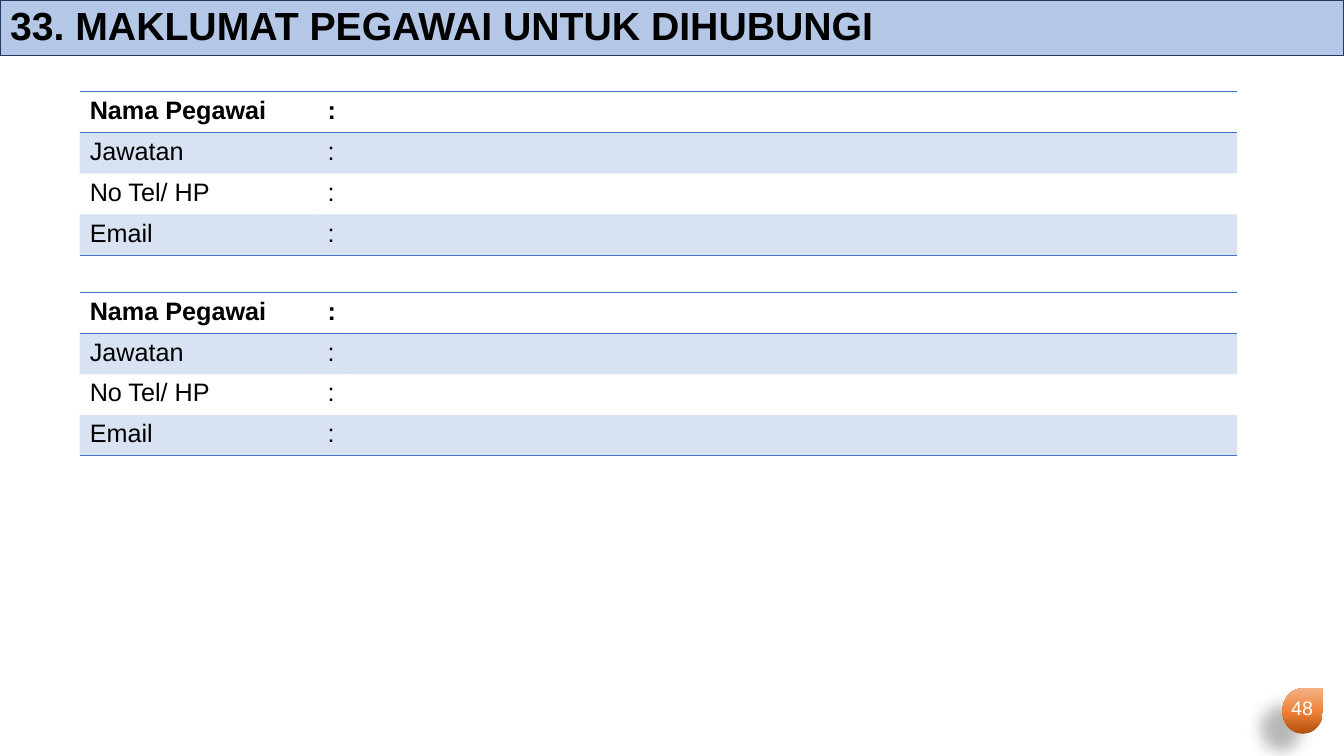
from pptx import Presentation
from pptx.dml.color import RGBColor
from pptx.enum.shapes import MSO_SHAPE as Shape
from pptx.enum.text import MSO_ANCHOR as Anchor, MSO_AUTO_SIZE as AutoSize, PP_ALIGN as Align
from pptx.oxml import parse_xml
from pptx.oxml.ns import nsdecls, qn
from pptx.util import Inches, Pt

COLORS = {
    "text": "000000", "band": "B4C7E7", "band_edge": "203864", "accent": "4472C4",
    "badge_dark": "B0500F", "badge_mid": "EE8137", "badge_light": "F4B183",
    "badge_text": "FFFFFF", "shadow": "000000",
}
FONT = "Arial"
NO_STYLE = "{2D5ABB26-0587-4C30-8999-92F81FD0307C}"
SLIDE_W, SLIDE_H = 13.33, 7.5
CONTACT_FIELDS = ["Nama Pegawai", "Jawatan", "No Tel/ HP", "Email"]
CONTACT_COLUMNS = [2.36, 0.3, 8.82]
ROW_H = 0.405
CONTACT_LEFT, CONTACT_TOP, CONTACT_PITCH = 0.79, 0.91, 1.99


def rgb(name):
    return RGBColor.from_string(COLORS[name])


def style_text(paragraph, size, color="text", bold=False):
    for run in paragraph.runs:
        font = run.font
        font.name, font.size, font.bold = FONT, Pt(size), bold
        font.color.rgb = rgb(color)


def add_title(slide, text, left, top, width, height):
    title = slide.shapes.title
    title.left, title.top, title.width, title.height = map(Inches, (left, top, width, height))
    title.fill.solid()
    title.fill.fore_color.rgb = rgb("band")
    title.line.color.rgb = rgb("band_edge")
    title.line.width = Pt(0.75)
    frame = title.text_frame
    frame.text = text
    frame.auto_size = AutoSize.NONE
    frame.vertical_anchor = Anchor.MIDDLE
    heading = frame.paragraphs[0]
    heading.alignment = Align.LEFT
    heading.line_spacing = 0.9
    style_text(heading, 28, bold=True)


def add_rule(cell, edge):
    """Draw the accent line on one edge of a cell: lnT or lnB."""
    cell_props = cell._tc.get_or_add_tcPr()
    cell_props.append(parse_xml(
        f'<a:{edge} {nsdecls("a")} w="{Pt(1)}"><a:solidFill>'
        f'<a:srgbClr val="{COLORS["accent"]}"/></a:solidFill></a:{edge}>'))


def shade(cell, banded):
    if not banded:
        cell.fill.background()
        return
    cell.fill.solid()
    cell.fill.fore_color.rgb = rgb("accent")
    tint = cell._tc.tcPr.find(f'{qn("a:solidFill")}/{qn("a:srgbClr")}')
    tint.append(parse_xml(f'<a:alpha {nsdecls("a")} val="20000"/>'))


def add_contact_table(slide, left, top):
    row_count = len(CONTACT_FIELDS)
    contact = slide.shapes.add_table(
        row_count, len(CONTACT_COLUMNS), Inches(left), Inches(top),
        Inches(sum(CONTACT_COLUMNS)), Inches(ROW_H * row_count)).table
    contact._tbl.tblPr.find(qn("a:tableStyleId")).text = NO_STYLE
    for column, width in zip(contact.columns, CONTACT_COLUMNS):
        column.width = Inches(width)
    for index, field in enumerate(CONTACT_FIELDS):
        contact.rows[index].height = Inches(ROW_H)
        for cell, text in zip(contact.rows[index].cells, (field, ":", "")):
            cell.text = text
            style_text(cell.text_frame.paragraphs[0], 18, bold=index == 0)
            if index == 0:
                add_rule(cell, "lnT")
            if index in (0, row_count - 1):
                add_rule(cell, "lnB")
            shade(cell, index % 2 == 1)


def add_page_badge(slide, number, left, top, width, height):
    badge = slide.shapes.add_shape(
        Shape.TEAR, Inches(left), Inches(top), Inches(width), Inches(height))
    badge.line.fill.background()
    badge.shadow.inherit = False
    badge.fill.gradient()
    badge.fill.gradient_angle = 90
    stops = badge._element.spPr.find(f'{qn("a:gradFill")}/{qn("a:gsLst")}')
    for stop in list(stops):
        stops.remove(stop)
    for share, name in ((0, "badge_dark"), (48, "badge_mid"), (100, "badge_light")):
        stops.append(parse_xml(
            f'<a:gs {nsdecls("a")} pos="{share * 1000}"><a:srgbClr val="{COLORS[name]}"/></a:gs>'))
    badge._element.spPr.find(qn("a:effectLst")).append(parse_xml(
        f'<a:outerShdw {nsdecls("a")} blurRad="{Pt(11.8)}" dist="{Pt(19.7)}" '
        f'dir="{141 * 60000}" rotWithShape="0"><a:srgbClr val="{COLORS["shadow"]}">'
        f'<a:alpha val="28000"/></a:srgbClr></a:outerShdw>'))

    label = slide.shapes.add_textbox(
        Inches(left - 0.05), Inches(top + 0.03), Inches(width + 0.09), Inches(height - 0.05))
    frame = label.text_frame
    frame.word_wrap = True
    frame.text = number
    frame.paragraphs[0].alignment = Align.CENTER
    style_text(frame.paragraphs[0], 14, "badge_text")


def main():
    prs = Presentation()
    prs.slide_width, prs.slide_height = Inches(SLIDE_W), Inches(SLIDE_H)
    slide = prs.slides.add_slide(prs.slide_layouts[5])
    add_title(slide, "33. MAKLUMAT PEGAWAI UNTUK DIHUBUNGI", 0, 0, SLIDE_W, 0.55)
    for officer in range(2):
        add_contact_table(slide, CONTACT_LEFT, CONTACT_TOP + officer * CONTACT_PITCH)
    add_page_badge(slide, "48", SLIDE_W - 0.61, SLIDE_H - 0.67, 0.4, 0.45)
    prs.save("out.pptx")


if __name__ == "__main__":
    main()
